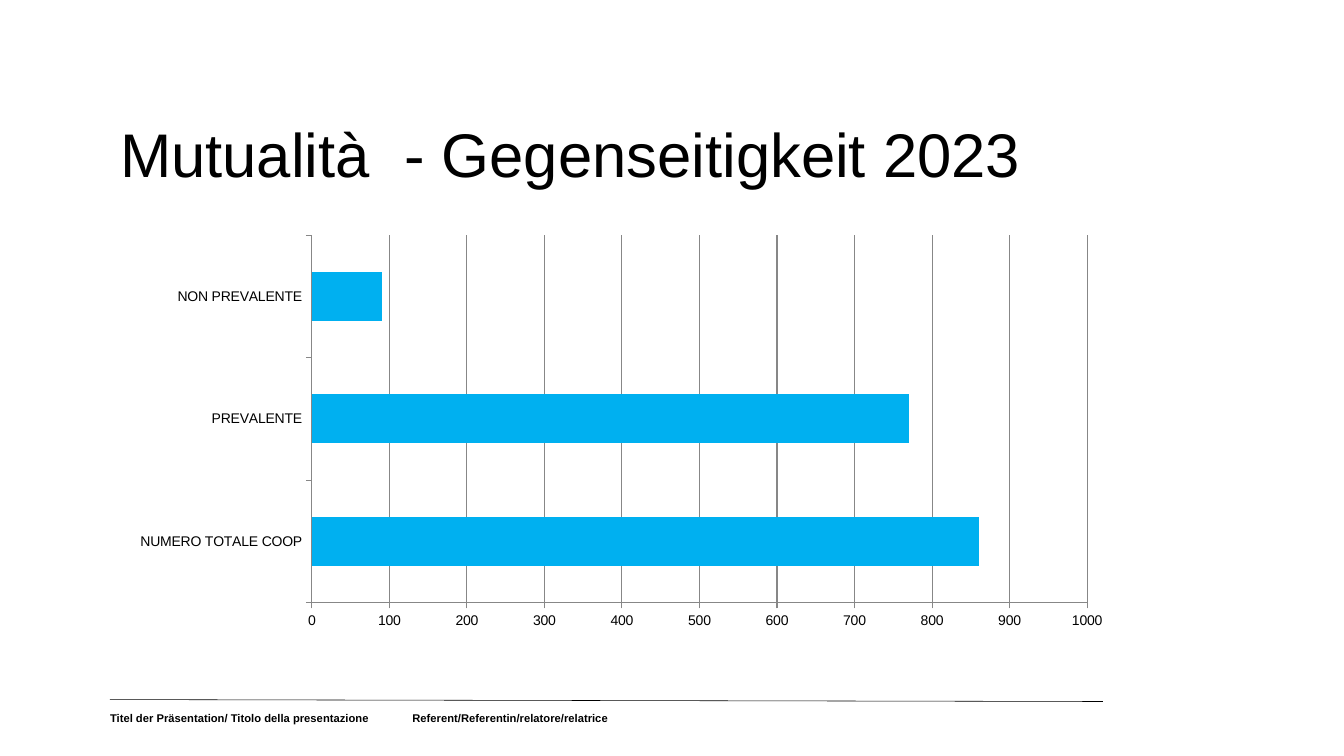
from dataclasses import dataclass

from lxml.etree import SubElement
from pptx import Presentation
from pptx.chart.data import CategoryChartData as ChartData
from pptx.dml.color import RGBColor as RGB
from pptx.enum.chart import XL_CHART_TYPE as Kind, XL_TICK_MARK as Tick
from pptx.enum.shapes import MSO_CONNECTOR as Link
from pptx.enum.text import MSO_ANCHOR as Anchor
from pptx.oxml.ns import qn
from pptx.util import Pt


@dataclass(frozen=True)
class Theme:
    face: str = "Arial"
    ink: RGB = RGB(0, 0, 0)
    grid: RGB = RGB(0x87, 0x87, 0x87)
    bar: RGB = RGB(0x00, 0xB0, 0xF0)
    title: float = 44
    label: float = 10
    foot: float = 8


THEME = Theme()


def style(font, size, bold=False):
    font.name = THEME.face
    font.size = Pt(size)
    font.bold = bold
    font.color.rgb = THEME.ink


def add_text(slide, box, size, leading, bold=False, tab=None):
    """Add an empty one-paragraph text box and return its paragraph."""
    frame = slide.shapes.add_textbox(*map(Pt, box)).text_frame
    frame.word_wrap = True
    frame.vertical_anchor = Anchor.TOP
    para = frame.paragraphs[0]
    para.line_spacing = leading
    if tab:
        stops = SubElement(para._p.get_or_add_pPr(), qn("a:tabLst"))
        SubElement(stops, qn("a:tab"), pos=str(Pt(tab)), algn="l")
    style(para.font, size, bold)
    return para


def add_title(slide):
    para = add_text(slide, (78.7, 85, 800, 70), THEME.title, 0.9)
    for part in ("Mutualità", " ", "- Gegenseitigkeit 2023"):
        run = para.add_run()
        run.text = part
        if part == " ":
            # Widen the gap before the dash by one more space
            run.font._element.set("spc", "1200")


def add_foot(slide):
    para = add_text(slide, (71.5, 501.1, 375.8, 18.7), THEME.foot, Pt(13),
                    bold=True, tab=216)
    para.add_run().text = ("Titel der Präsentation/ Titolo della presentazione"
                           "\tReferent/Referentin/relatore/relatrice")


def add_rule(slide, start, end):
    rule = slide.shapes.add_connector(Link.STRAIGHT, *map(Pt, start + end))
    rule.line.width = Pt(0.4)
    rule.line.color.rgb = THEME.ink
    SubElement(rule._element.spPr, qn("a:effectLst"))


def add_bars(slide, box, data):
    source = ChartData()
    source.categories = list(data)
    source.add_series("Series 1", list(data.values()))
    frame = slide.shapes.add_chart(Kind.BAR_CLUSTERED, *map(Pt, box), source)
    chart = frame.chart
    chart.has_legend = False
    chart.has_title = False
    style(chart.font, THEME.label)

    plot = chart.plots[0]
    plot.gap_width = 150
    plot.vary_by_categories = False
    fill = plot.series[0].format.fill
    fill.solid()
    fill.fore_color.rgb = THEME.bar

    scale = chart.value_axis
    scale.minimum_scale, scale.maximum_scale, scale.major_unit = 0, 1000, 100
    scale.has_major_gridlines = True
    for axis in (chart.category_axis, scale):
        axis.major_tick_mark = Tick.OUTSIDE
        axis.minor_tick_mark = Tick.NONE
    for part in (chart.category_axis, scale, scale.major_gridlines):
        part.format.line.color.rgb = THEME.grid
        part.format.line.width = Pt(0.75)


def main():
    deck = Presentation()
    deck.slide_width, deck.slide_height = Pt(960), Pt(540)
    slide = deck.slides.add_slide(deck.slide_layouts[6])
    add_foot(slide)
    add_rule(slide, (78.5, 499.7), (787.7, 501.1))
    add_title(slide)
    add_bars(slide, (86, 162.3, 715.7, 292.3), {
        "NUMERO TOTALE COOP": 860,
        "PREVALENTE": 770,
        "NON PREVALENTE": 90,
    })
    deck.save("out.pptx")


if __name__ == "__main__":
    main()
